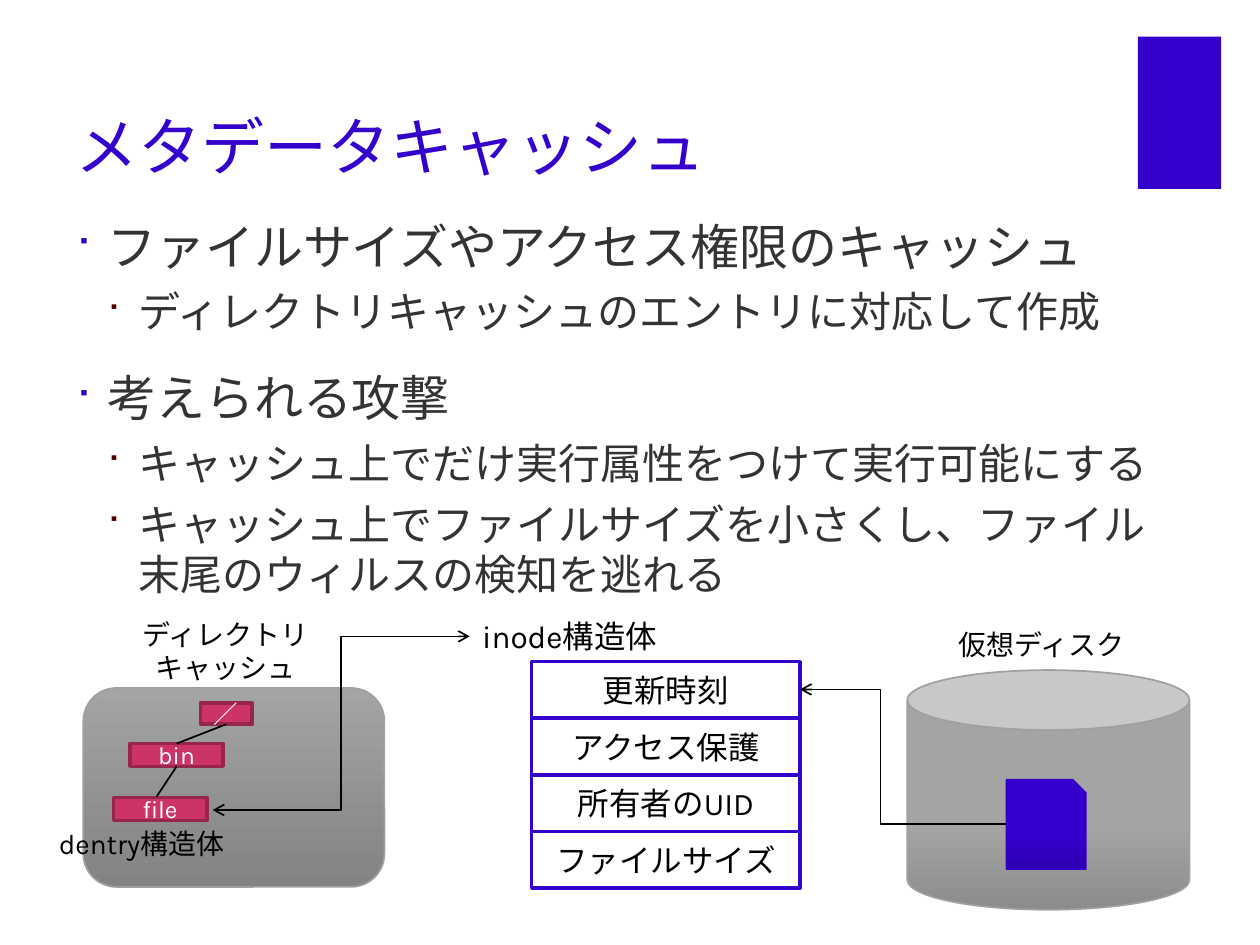
import dataclasses
import typing

import lxml.etree
import pptx
import pptx.dml.color
import pptx.enum.dml
import pptx.enum.lang
import pptx.enum.shapes
import pptx.enum.text
import pptx.oxml
import pptx.oxml.ns
import pptx.util

Cm = pptx.util.Cm
Pt = pptx.util.Pt
SHAPE = pptx.enum.shapes.MSO_SHAPE
CONNECTOR = pptx.enum.shapes.MSO_CONNECTOR
ALIGN = pptx.enum.text.PP_ALIGN
ANCHOR = pptx.enum.text.MSO_ANCHOR
FIT = pptx.enum.text.MSO_AUTO_SIZE
qn = pptx.oxml.ns.qn

COLORS = {
    "blue": "3300CC", "blue_dark": "2C00AF", "blue_line": "3200C8",
    "maroon": "4D0000", "body": "333333", "black": "000000", "white": "FFFFFF",
    "pink": "CC3366", "pink_line": "97264B", "gray": "A4A4A4",
    "gray_line": "A0A0A0", "disk_dark": "8C8C8C", "cache_dark": "838383",
}
HEADING_FONT = "Karla"
BODY_FONT = "TeX Gyre Adventor"


@dataclasses.dataclass(frozen=True)
class Box:
    left: float
    top: float
    width: float
    height: float

    def lengths(self) -> list[pptx.util.Length]:
        return [Cm(value) for value in dataclasses.astuple(self)]


@dataclasses.dataclass(frozen=True)
class Style:
    fill: str
    line: typing.Optional[str] = None
    line_width: float = 1
    gradient_start: typing.Optional[str] = None
    gradient_end: float = 1
    text_size: float = 18
    text_color: str = "black"


@dataclasses.dataclass(frozen=True)
class Label:
    text: str
    box: Box
    size: float
    centered: bool = False
    wrap: bool = True


@dataclasses.dataclass(frozen=True)
class Level:
    size: float
    indent: float
    space_before: float
    bullet_color: str


FIELD = Style("white", "blue", 2)
ENTRY = Style("pink", "pink_line", 2, text_size=14, text_color="white")
DISK = Style("gray", "gray_line", gradient_start="disk_dark", gradient_end=0.35)
CACHE = Style("gray", "gray_line", gradient_start="cache_dark")
FILE = Style("blue", "blue_line", gradient_start="blue_dark", gradient_end=0.35)

LEVELS = [Level(28, 0.64, 18, "blue"), Level(24, 1.27, 6, "maroon")]
BULLETS = [
    (0, "ファイルサイズやアクセス権限のキャッシュ"),
    (1, "ディレクトリキャッシュのエントリに対応して作成"),
    (0, "考えられる攻撃"),
    (1, "キャッシュ上でだけ実行属性をつけて実行可能にする"),
    (1, "キャッシュ上でファイルサイズを小さくし、ファイル末尾のウィルスの検知を逃れる"),
]
INODE_FIELDS = ["更新時刻", "アクセス保護", "所有者のUID", "ファイルサイズ"]
LABELS = [
    Label("inode構造体", Box(9.47, 12.32, 4.19, 1.02), 18, wrap=False),
    Label("ディレクトリ\nキャッシュ", Box(2.39, 12.32, 4.32, 1.63), 16, centered=True),
    Label("仮想ディスク", Box(19.08, 12.52, 4.09, 0.94), 16),
    Label("dentry構造体", Box(0.94, 16.54, 3.96, 0.94), 16, wrap=False),
]


def rgb(name: str) -> pptx.dml.color.RGBColor:
    return pptx.dml.color.RGBColor.from_string(COLORS[name])


def format_runs(paragraph, size: float, color: str, font: str = HEADING_FONT) -> None:
    for run in paragraph.runs:
        run.font.name = font
        run.font.size = Pt(size)
        run.font.color.rgb = rgb(color)
        run.font.language_id = pptx.enum.lang.MSO_LANGUAGE_ID.JAPANESE


def place(shape, box: Box) -> None:
    shape.left, shape.top, shape.width, shape.height = box.lengths()


def add_shape(slide, kind, box: Box, style: Style, text: str = ""):
    shape = slide.shapes.add_shape(kind, *box.lengths())
    shape.shadow.inherit = False
    if style.gradient_start:
        shape.fill.gradient()
        shape.fill.gradient_angle = 90
        start, end = shape.fill.gradient_stops
        start.color.rgb, start.position = rgb(style.gradient_start), 0
        end.color.rgb, end.position = rgb(style.fill), style.gradient_end
    else:
        shape.fill.solid()
        shape.fill.fore_color.rgb = rgb(style.fill)
    if style.line:
        shape.line.color.rgb = rgb(style.line)
        shape.line.width = Pt(style.line_width)
    else:
        shape.line.fill.background()
    if text:
        shape.text_frame.text = text
        shape.text_frame.vertical_anchor = ANCHOR.MIDDLE
        paragraph = shape.text_frame.paragraphs[0]
        paragraph.alignment = ALIGN.CENTER
        format_runs(paragraph, style.text_size, style.text_color)
    return shape


def add_label(slide, label: Label) -> None:
    text_frame = slide.shapes.add_textbox(*label.box.lengths()).text_frame
    text_frame.text = label.text
    text_frame.word_wrap = label.wrap
    text_frame.auto_size = FIT.SHAPE_TO_FIT_TEXT
    for paragraph in text_frame.paragraphs:
        paragraph.alignment = ALIGN.CENTER if label.centered else ALIGN.LEFT
        format_runs(paragraph, label.size, "black")


def add_line(slide, kind, start: tuple[float, float], end: tuple[float, float],
             arrows: tuple[str, ...] = (), bend: typing.Optional[float] = None):
    connector = slide.shapes.add_connector(kind, *map(Cm, start + end))
    connector.line.color.rgb = rgb("black")
    connector.line.width = Pt(1)
    properties = connector._element.spPr
    for arrow in arrows:
        lxml.etree.SubElement(properties.find(qn("a:ln")), qn(f"a:{arrow}"), type="arrow")
    if bend is not None:
        guides = properties.find(qn("a:prstGeom")).get_or_add_avLst()
        lxml.etree.SubElement(guides, qn("a:gd"), name="adj1", fmla=f"val {round(bend * 100000)}")
    lxml.etree.SubElement(properties, qn("a:effectLst"))
    return connector


def set_bullet(paragraph, level: Level) -> None:
    properties = paragraph._p.get_or_add_pPr()
    properties.set("marL", str(Cm(level.indent)))
    properties.set("indent", str(-Cm(0.64)))
    color = lxml.etree.SubElement(properties, qn("a:buClr"))
    lxml.etree.SubElement(color, qn("a:srgbClr"), val=COLORS[level.bullet_color])
    lxml.etree.SubElement(properties, qn("a:buSzPct"), val="75000")
    lxml.etree.SubElement(properties, qn("a:buFont"), typeface="Wingdings")
    lxml.etree.SubElement(properties, qn("a:buChar"), char="■")


def fill_title(title) -> None:
    place(title, Box(1.27, 0.64, 21.39, 3.18))
    title.text_frame.text = "メタデータキャッシュ"
    title.text_frame.vertical_anchor = ANCHOR.BOTTOM
    title.text_frame.auto_size = FIT.NONE
    paragraph = title.text_frame.paragraphs[0]
    paragraph.alignment = ALIGN.LEFT
    format_runs(paragraph, 36, "blue")


def fill_body(body) -> None:
    place(body, Box(1.27, 4.24, 22.66, 13.41))
    body.text_frame.text = "\n".join(text for _, text in BULLETS)
    body.text_frame.auto_size = FIT.NONE
    for paragraph, (depth, _) in zip(body.text_frame.paragraphs, BULLETS):
        level = LEVELS[depth]
        paragraph.level = depth
        paragraph.space_before = Pt(level.space_before)
        set_bullet(paragraph, level)
        format_runs(paragraph, level.size, "body", BODY_FONT)


def main() -> None:
    presentation = pptx.Presentation()
    presentation.slide_width, presentation.slide_height = Cm(25.4), Cm(19.05)
    slide = presentation.slides.add_slide(presentation.slide_layouts[1])
    fill_title(slide.shapes.title)
    fill_body(slide.placeholders[1])

    add_shape(slide, SHAPE.RECTANGLE, Box(22.94, 0.74, 1.68, 3.07), Style("blue"))
    add_shape(slide, SHAPE.CAN, Box(18.29, 13.51, 5.69, 4.83), DISK)
    add_shape(slide, SHAPE.ROUNDED_RECTANGLE, Box(1.68, 13.87, 6.07, 4.01), CACHE)
    add_shape(slide, SHAPE.SNIP_1_RECTANGLE, Box(20.29, 15.72, 1.6, 1.8), FILE)
    for index, field in enumerate(INODE_FIELDS):
        add_shape(slide, SHAPE.RECTANGLE, Box(10.72, 13.34 + index * 1.14, 5.41, 1.14), FIELD, field)
    for label in LABELS:
        add_label(slide, label)

    root = add_shape(slide, SHAPE.RECTANGLE, Box(4.04, 14.17, 1.04, 0.43), ENTRY, "／")
    folder = add_shape(slide, SHAPE.RECTANGLE, Box(2.62, 14.99, 1.88, 0.46), ENTRY, "bin")
    add_shape(slide, SHAPE.RECTANGLE, Box(2.29, 16.08, 1.88, 0.46), ENTRY, "file")
    root_link = add_line(slide, CONNECTOR.STRAIGHT, (4.56, 14.6), (3.56, 14.99))
    root_link.begin_connect(root, 2)
    root_link.end_connect(folder, 0)
    folder_link = add_line(slide, CONNECTOR.STRAIGHT, (3.56, 15.45), (3.15, 16.07))
    folder_link.begin_connect(folder, 2)

    add_line(slide, CONNECTOR.ELBOW, (20.29, 16.62), (16.13, 13.9), ("tailEnd",), 0.61)
    add_line(slide, CONNECTOR.ELBOW, (9.47, 12.83), (4.29, 16.33), ("headEnd", "tailEnd"))
    presentation.save("out.pptx")


if __name__ == "__main__":
    main()
